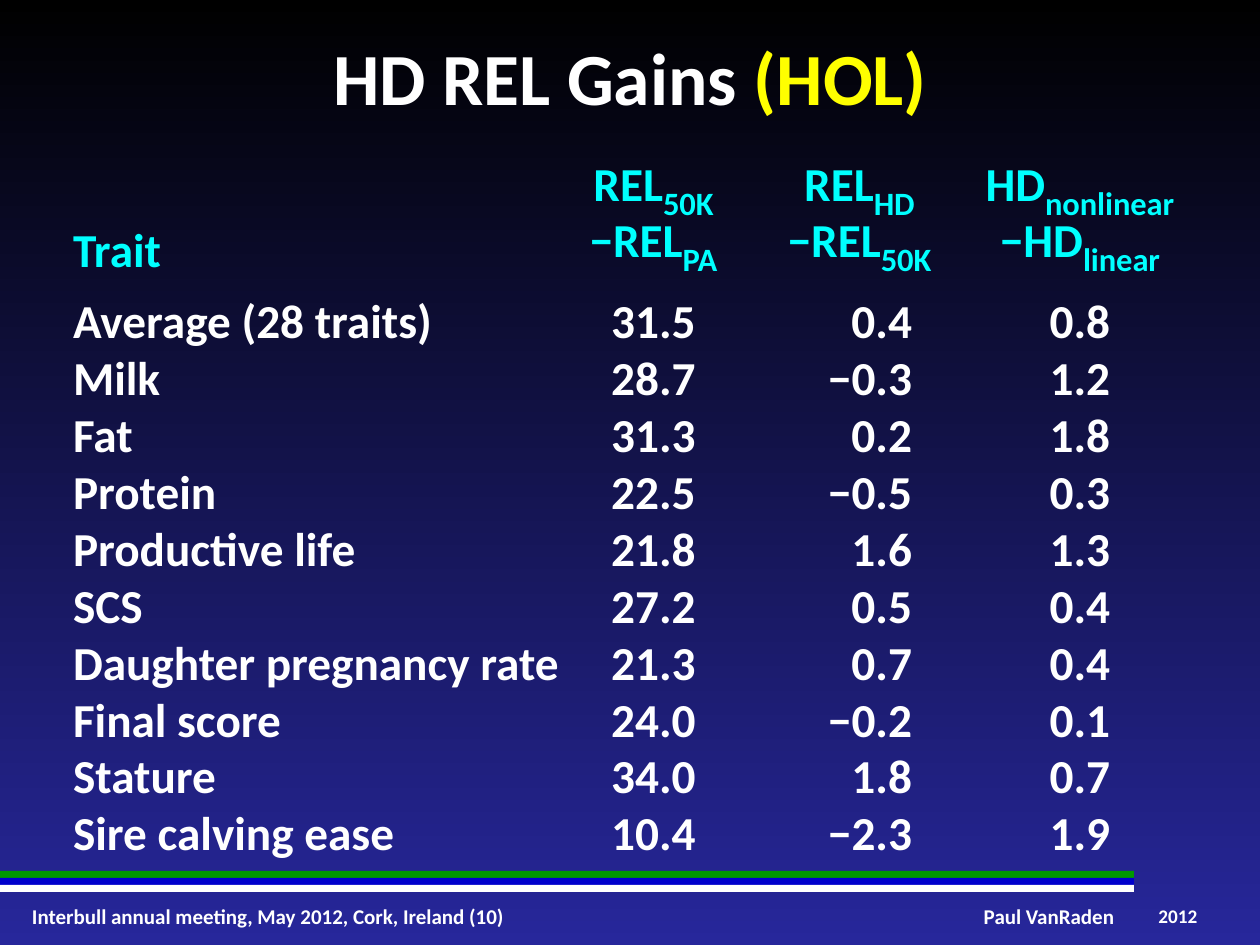
from pptx import Presentation
from pptx.dml.color import RGBColor as RGB
from pptx.enum.shapes import MSO_SHAPE as Shape
from pptx.enum.text import MSO_ANCHOR as Anchor, PP_ALIGN as Align
from pptx.util import Emu, Pt

SCALE = 914400 // 126  # EMU per px
HUES = {"night": "000000", "indigo": "27279B", "white": "FFFFFF", "gold": "FFFF00",
        "cyan": "00FFFF", "green": "009900", "blue": "0000CC"}
PLAIN = "{2D5ABB26-0587-4C30-8999-92F81FD0307C}"  # no style, no grid


def px(n):
    return Emu(n * SCALE)


def hue(name):
    return RGB.from_string(HUES[name])


class Deck:
    font = "Calibri"

    def __init__(self, wide, high):
        self.prs = Presentation()
        self.prs.slide_width, self.prs.slide_height = px(wide), px(high)
        self.slide = self.prs.slides.add_slide(self.prs.slide_layouts[5])

    def back(self, top, foot):
        fill = self.slide.background.fill
        fill.gradient()
        fill.gradient_angle = 270
        for stop, name in zip(fill.gradient_stops, (top, foot)):
            stop.color.rgb = hue(name)

    def style(self, run, size, color, sub=False):
        font = run.font
        font.name, font.size, font.bold = self.font, Pt(size), True
        font.color.rgb = hue(color)
        if sub:
            run._r.get_or_add_rPr().set("baseline", "-25000")

    def place(self, shape, box):
        shape.left, shape.top, shape.width, shape.height = map(px, box)

    def inset(self, item, right=0, foot=0):
        item.margin_left = item.margin_top = 0
        item.margin_right, item.margin_bottom = px(right), px(foot)

    def title(self, box, parts):
        shape = self.slide.shapes.title
        self.place(shape, box)
        frame = shape.text_frame
        self.inset(frame)
        frame.vertical_anchor = Anchor.TOP
        para = frame.paragraphs[0]
        para.alignment = Align.CENTER
        for text, color in parts:
            run = para.add_run()
            run.text = text
            self.style(run, 42, color)

    def label(self, box, text, size, align, wrap=True):
        frame = self.slide.shapes.add_textbox(*map(px, box)).text_frame
        self.inset(frame)
        frame.word_wrap = wrap
        frame.vertical_anchor = Anchor.MIDDLE
        frame.text = text
        para = frame.paragraphs[0]
        para.alignment = align
        self.style(para.runs[0], size, "white")

    def bar(self, box, color):
        shape = self.slide.shapes.add_shape(Shape.RECTANGLE, *map(px, box))
        shape.shadow.inherit = False
        shape.fill.solid()
        shape.fill.fore_color.rgb = hue(color)
        shape.line.fill.background()

    def table(self, left, top, cols, rows):
        frame = self.slide.shapes.add_table(
            len(rows), len(cols), px(left), px(top), px(sum(cols)), px(sum(rows)))
        grid = frame.table
        grid.first_row = grid.horz_banding = False
        grid._tbl.tblPr[0].text = PLAIN
        for col, wide in zip(grid.columns, cols):
            col.width = px(wide)
        for row, high in zip(grid.rows, rows):
            row.height = px(high)
        return grid

    def cell(self, cell, parts, color, align, right=0, foot=0, lead=None):
        """Fill a cell; every second part is a subscript."""
        cell.fill.background()
        self.inset(cell, right, foot)
        para = cell.text_frame.paragraphs[0]
        para.alignment = align
        if lead:
            para.line_spacing = Pt(lead)
        for n, text in enumerate(parts):
            run = para.add_run()
            run.text = text
            sub = n % 2 == 1
            self.style(run, 32 if sub else 27, color, sub)


HEADS = [
    ["Trait"],
    ["REL", "50K", " −REL", "PA"],
    ["REL", "HD", " −REL", "50K"],
    ["HD", "nonlinear", " −HD", "linear"],
]
GAINS = [
    ("Average (28 traits)", "31.5", "0.4", "0.8"),
    ("Milk", "28.7", "−0.3", "1.2"),
    ("Fat", "31.3", "0.2", "1.8"),
    ("Protein", "22.5", "−0.5", "0.3"),
    ("Productive life", "21.8", "1.6", "1.3"),
    ("SCS", "27.2", "0.5", "0.4"),
    ("Daughter pregnancy rate", "21.3", "0.7", "0.4"),
    ("Final score", "24.0", "−0.2", "0.1"),
    ("Stature", "34.0", "1.8", "0.7"),
    ("Sire calving ease", "10.4", "−2.3", "1.9"),
]


def main():
    deck = Deck(1260, 945)
    deck.back("night", "indigo")

    # Footer labels and stripes
    deck.label((32, 904, 553, 25), "Interbull annual meeting, May 2012, Cork, Ireland (10)",
               12, Align.LEFT)
    deck.label((983, 904, 132, 25), "Paul VanRaden", 12, Align.CENTER, wrap=False)
    deck.label((1155, 904, 46, 24), "2012", 11, Align.CENTER)
    for n, color in enumerate(("green", "blue", "white")):
        deck.bar((0, 871 + 7 * n, 1134, 7), color)

    # Title
    deck.title((63, 32, 1134, 126), [("HD REL Gains ", "white"), ("(HOL)", "gold")])

    # Table: header row, then one row per trait
    grid = deck.table(73, 168, [490, 181, 231, 210], [125] + [57] * len(GAINS))
    for c, parts in enumerate(HEADS):
        deck.cell(grid.cell(0, c), parts, "cyan", Align.CENTER if c else Align.LEFT,
                  foot=13, lead=32 if c else None)
    grid.cell(0, 0).vertical_anchor = Anchor.BOTTOM
    sides = [Align.LEFT, Align.CENTER, Align.RIGHT, Align.CENTER]
    for r, gain in enumerate(GAINS, 1):
        for c, (text, side) in enumerate(zip(gain, sides)):
            deck.cell(grid.cell(r, c), [text], "white", side,
                      right=63 if side == Align.RIGHT else 0)

    deck.prs.save("out.pptx")


if __name__ == "__main__":
    main()
